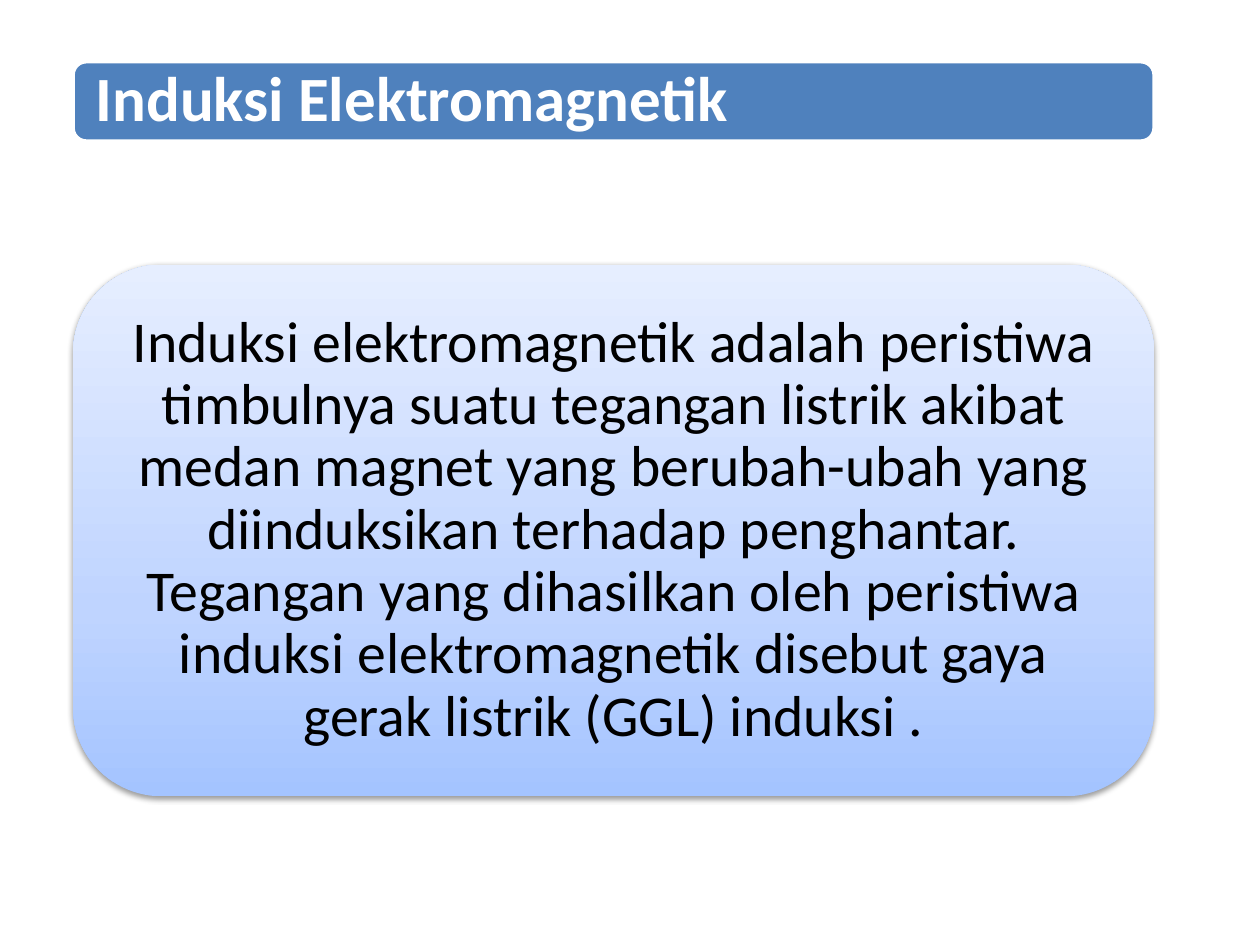
from lxml import etree
from pptx import Presentation
from pptx import util as u
from pptx.dml.color import RGBColor
from pptx.enum import shapes, text

# Content
TITLE = "Induksi Elektromagnetik"
DEFINITION = (
    "Induksi elektromagnetik adalah peristiwa timbulnya suatu tegangan listrik akibat "
    "medan magnet yang berubah-ubah yang diinduksikan terhadap penghantar. "
    "Tegangan yang dihasilkan oleh peristiwa induksi elektromagnetik disebut gaya "
    "gerak listrik (GGL) induksi ."
)
FONT = "Calibri"
PANEL_STOPS = [(0, "A4C4FF"), (35, "BFD4FF"), (100, "E6EEFF")]

# Layout in inches: left, top, width, height
BAR = (0.58, 0.49, 8.58, 0.63)
PANEL = (0.58, 2.1, 8.58, 4.22)
BAR_PADDING = 0.03
DRAWING_NS = "http://schemas.openxmlformats.org/drawingml/2006/main"


def color(hex_value):
    return RGBColor.from_string(hex_value)


def add_round_box(slide, box):
    shape = slide.shapes.add_shape(
        shapes.MSO_SHAPE.ROUNDED_RECTANGLE, *map(u.Inches, box))
    shape.shadow.inherit = False
    return shape


def write_text(shape, content, size, hex_value, inset, align, bold=False):
    frame = shape.text_frame
    frame.word_wrap = True
    frame.auto_size = text.MSO_AUTO_SIZE.NONE
    frame.vertical_anchor = text.MSO_ANCHOR.MIDDLE
    frame.margin_left = frame.margin_right = u.Inches(inset)
    frame.margin_top = frame.margin_bottom = u.Inches(inset)
    paragraph = frame.paragraphs[0]
    paragraph.alignment = align
    paragraph.line_spacing = 0.9
    run = paragraph.add_run()
    run.text = content
    run.font.name = FONT
    run.font.size = u.Pt(size)
    run.font.bold = bold
    run.font.color.rgb = color(hex_value)


def set_gradient(shape, stops):
    """Fill from the bottom edge up to the top edge."""
    stop_xml = "".join(
        f'<a:gs pos="{position * 1000}"><a:srgbClr val="{value}"/></a:gs>'
        for position, value in stops)
    gradient = etree.fromstring(
        f'<a:gradFill xmlns:a="{DRAWING_NS}" rotWithShape="1"><a:gsLst>{stop_xml}</a:gsLst>'
        '<a:lin ang="16200000" scaled="0"/></a:gradFill>')
    shape._element.spPr.find(f"{{{DRAWING_NS}}}prstGeom").addnext(gradient)


def set_shadow(shape, blur, distance, opacity):
    effects = shape._element.spPr.find(f"{{{DRAWING_NS}}}effectLst")
    effects.append(etree.fromstring(
        f'<a:outerShdw xmlns:a="{DRAWING_NS}" blurRad="{u.Pt(blur)}" '
        f'dist="{u.Pt(distance)}" dir="5400000" rotWithShape="0">'
        f'<a:srgbClr val="000000"><a:alpha val="{opacity * 1000}"/></a:srgbClr>'
        '</a:outerShdw>'))


presentation = Presentation()
presentation.slide_width = u.Inches(10)
presentation.slide_height = u.Inches(7.5)
slide = presentation.slides.add_slide(presentation.slide_layouts[5])
title = slide.shapes.title

# Definition panel
panel = add_round_box(slide, PANEL)
panel.line.fill.background()
set_gradient(panel, PANEL_STOPS)
set_shadow(panel, blur=3.1, distance=1.6, opacity=38)
write_text(panel, DEFINITION, 33, "000000", 0.14, text.PP_ALIGN.CENTER)

# Title bar, with the title placeholder brought in front of it
bar = add_round_box(slide, BAR)
bar.fill.solid()
bar.fill.fore_color.rgb = color("4F81BD")
bar.line.color.rgb = color("FFFFFF")
bar.line.width = u.Pt(2)
bar._element.addnext(title._element)

left, top, width, height = BAR
title.left, title.top = u.Inches(left + BAR_PADDING), u.Inches(top + BAR_PADDING)
title.width = u.Inches(width - 2 * BAR_PADDING)
title.height = u.Inches(height - 2 * BAR_PADDING)
write_text(title, TITLE, 36, "FFFFFF", 0.15, text.PP_ALIGN.LEFT, bold=True)

presentation.save("out.pptx")
